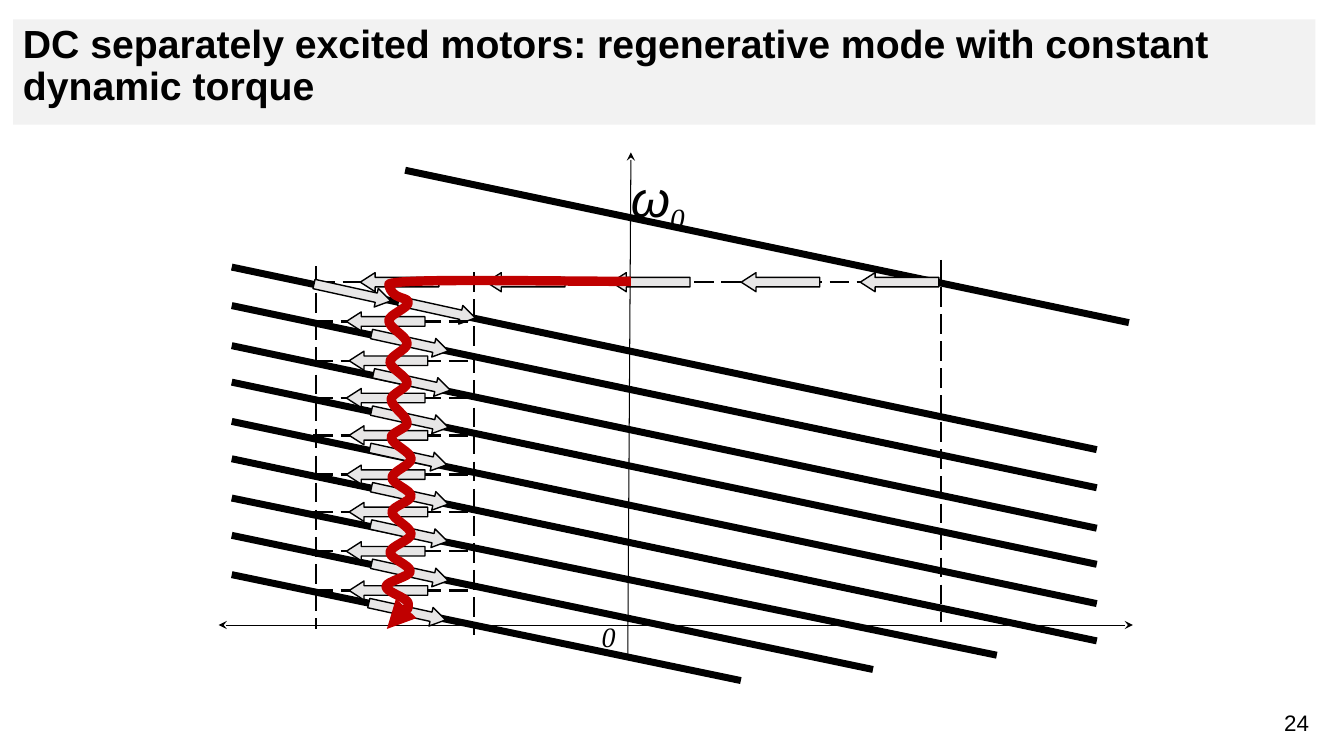
from lxml import etree
from pptx import Presentation
from pptx.dml.color import RGBColor
from pptx.enum import dml, shapes, text
from pptx.oxml.ns import qn
from pptx.util import Cm, Pt

BLACK = RGBColor(0, 0, 0)
RED = RGBColor(0xC0, 0, 0)
ARROW_GREY = RGBColor(0xE7, 0xE6, 0xE6)
TITLE_GREY = RGBColor(0xF2, 0xF2, 0xF2)

LEFT, DOWN_RIGHT = 270, 102.4  # arrow rotations
TOP_Y = 7.11

# Start height and right end of each parallel characteristic
CHARACTERISTICS = [
    (6.73, 27.64, 11.33), (7.7, 27.64, 12.29), (8.71, 27.64, 13.31),
    (9.63, 27.64, 14.22), (10.62, 27.64, 15.21), (11.56, 27.64, 16.15),
    (12.55, 25.12, 16.51), (13.49, 22, 16.87), (14.48, 18.67, 17.15),
]
# Height of each switching step and centre of its two arrows
STEPS = [
    (8.1, 9.72, 10.33), (9.09, 9.79, 10.38), (10.03, 9.72, 10.33),
    (10.97, 9.79, 10.29), (11.96, 9.72, 10.33), (12.9, 9.79, 10.31),
    (13.89, 9.72, 10.33), (14.88, 9.79, 10.26),
]
# Turning points of the red trajectory, from the bottom up
TURNS = [
    (9.75, 15.85), (10.29, 15.21), (9.73, 14.78), (10.34, 14.4), (9.83, 13.92),
    (10.36, 13.46), (9.88, 12.9), (10.36, 12.5), (9.88, 12.04), (10.36, 11.56),
    (9.86, 11.02), (10.26, 10.67), (9.86, 10.06), (10.26, 9.65), (9.83, 9.12),
    (10.26, 8.66), (9.8, 8.08), (10.29, 7.62),
]


def add_line_end(sp, end, kind):
    ln = sp.line._get_or_add_ln()
    etree.SubElement(ln, qn("a:" + end)).set("type", kind)


def add_line(s, x1, y1, x2, y2, width, dashed=False, head=None, tail=None):
    c = s.shapes.add_connector(shapes.MSO_CONNECTOR.STRAIGHT,
                               Cm(x1), Cm(y1), Cm(x2), Cm(y2))
    c.line.color.rgb = BLACK
    c.line.width = Pt(width)
    if dashed:
        c.line.dash_style = dml.MSO_LINE.LONG_DASH
    if head:
        add_line_end(c, "headEnd", head)
    if tail:
        add_line_end(c, "tailEnd", tail)
    etree.SubElement(c._element.spPr, qn("a:effectLst"))


def add_dash(s, x1, y1, x2, y2):
    add_line(s, x1, y1, x2, y2, 1.75, dashed=True)


def add_arrow(s, cx, cy, rotation):
    """Place a block arrow by its centre."""
    w, h = 0.48, 1.98
    sp = s.shapes.add_shape(shapes.MSO_SHAPE.UP_ARROW,
                            Cm(cx - w / 2), Cm(cy - h / 2), Cm(w), Cm(h))
    sp.adjustments[0] = 0.5
    sp.adjustments[1] = 0.78
    sp.rotation = rotation
    sp.shadow.inherit = False
    sp.fill.solid()
    sp.fill.fore_color.rgb = ARROW_GREY
    sp.line.color.rgb = BLACK
    sp.line.width = Pt(1)


def add_run(p, content, size, font="Arial", bold=False, italic=False, baseline=None):
    r = p.add_run()
    r.text = content
    f = r.font
    f.size, f.name, f.bold, f.italic = Pt(size), font, bold, italic
    f.color.rgb = BLACK
    if baseline:
        r._r.get_or_add_rPr().set("baseline", str(baseline))


def add_text_box(s, x, y, w, h, wrap=True):
    tf = s.shapes.add_textbox(Cm(x), Cm(y), Cm(w), Cm(h)).text_frame
    tf.word_wrap = wrap
    return tf.paragraphs[0]


def add_title(s, content):
    sp = s.shapes.add_shape(shapes.MSO_SHAPE.RECTANGLE,
                            Cm(0.33), Cm(0.49), Cm(32.82), Cm(2.65))
    sp.shadow.inherit = False
    sp.fill.solid()
    sp.fill.fore_color.rgb = TITLE_GREY
    sp.line.fill.background()
    tf = sp.text_frame
    tf.word_wrap = True
    tf.vertical_anchor = text.MSO_ANCHOR.TOP
    p = tf.paragraphs[0]
    p.alignment = text.PP_ALIGN.LEFT
    p.line_spacing = 0.9
    add_run(p, content, 28, bold=True)


def add_curve(s, start, curves):
    """Build an open outline of cubic curves: (control, control, end) each."""
    fb = s.shapes.build_freeform(Cm(start[0]), Cm(start[1]))
    fb.add_line_segments([(Cm(x), Cm(y)) for _, _, (x, y) in curves], close=False)
    sp = fb.convert_to_shape()
    segments = list(sp._element.iter(qn("a:lnTo")))
    for segment, points in zip(segments, curves):
        segment.clear()
        bend = etree.Element(qn("a:cubicBezTo"))
        for x, y in points:
            pt = etree.SubElement(bend, qn("a:pt"))
            pt.set("x", str(Cm(x) - sp.left))
            pt.set("y", str(Cm(y) - sp.top))
        segment.getparent().replace(segment, bend)
    return sp


def add_trajectory(s):
    curves = []
    for (x1, y1), (x2, y2) in zip(TURNS, TURNS[1:]):
        third = (y2 - y1) / 3
        curves.append(((x1, y1 + third), (x2, y2 - third), (x2, y2)))
    curves.append(((10.29, 7.47), (9.86, 7.57), (9.8, 7.16)))
    curves.append(((10.08, 7.01), (13.51, 7.09), (15.9, 7.09)))
    sp = add_curve(s, TURNS[0], curves)
    sp.shadow.inherit = False
    sp.fill.background()
    sp.line.color.rgb = RED
    sp.line.width = Pt(6.75)
    add_line_end(sp, "headEnd", "triangle")


def main():
    prs = Presentation()
    prs.slide_width, prs.slide_height = Cm(33.87), Cm(19.05)
    s = prs.slides.add_slide(prs.slide_layouts[6])

    add_title(s, "DC separately excited motors: regenerative mode with "
                 "constant dynamic torque")
    add_line(s, 15.9, 3.84, 15.82, 16.59, 0.75, head="stealth")
    add_line(s, 5.51, 15.75, 28.55, 15.75, 0.75, head="stealth", tail="stealth")

    add_line(s, 10.21, 4.29, 28.45, 8.13, 5)
    for y, right, bottom in CHARACTERISTICS:
        add_line(s, 5.84, y, right, bottom, 5)

    for x, top, bottom in [(7.96, 6.71, 15.85), (11.94, 6.86, 16), (23.71, 6.55, 15.67)]:
        add_dash(s, x, top, x, bottom)
    add_dash(s, 7.95, TOP_Y, 23.75, TOP_Y)

    add_arrow(s, 8.88, 7.37, DOWN_RIGHT)
    for x in (22.67, 19.67, 16.4, 13.25, 10.07):
        add_arrow(s, x, TOP_Y, LEFT)
    add_arrow(s, 11.01, 7.8, DOWN_RIGHT)
    for y, left_x, right_x in STEPS:
        add_dash(s, 7.9, y, 11.89, y)
        add_arrow(s, left_x, y, LEFT)
        add_arrow(s, right_x, y + 0.53, DOWN_RIGHT)

    add_trajectory(s)

    p = add_text_box(s, 15.65, 3.82, 2.74, 1.98)
    p.line_spacing = 1.15
    add_run(p, "ω", 36, italic=True)
    add_run(p, "0", 36, "Times New Roman", italic=True, baseline=-25000)
    p = add_text_box(s, 14.91, 15.48, 1.14, 1.35, wrap=False)
    add_run(p, "0", 20, "Times New Roman", italic=True)
    p = add_text_box(s, 31.86, 17.75, 1.63, 0.94)
    p.alignment = text.PP_ALIGN.CENTER
    add_run(p, "24", 16)

    prs.save("out.pptx")


if __name__ == "__main__":
    main()
